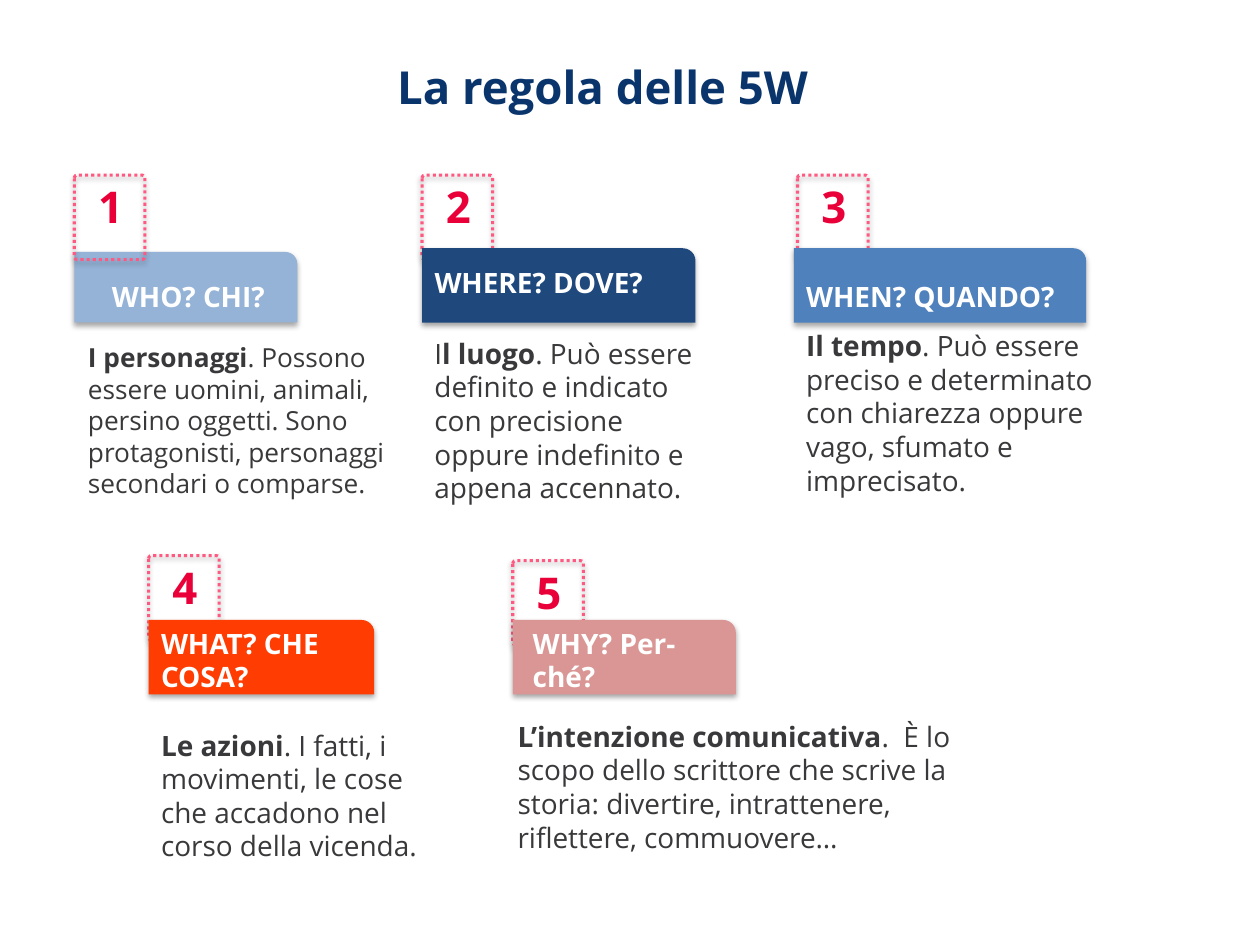
from dataclasses import dataclass
from typing import Any

from lxml.etree import SubElement
from pptx import Presentation
from pptx.dml.color import RGBColor
from pptx.enum.dml import MSO_LINE
from pptx.enum.shapes import MSO_SHAPE as Shape
from pptx.enum.text import MSO_AUTO_SIZE as AutoSize, PP_ALIGN as Align
from pptx.oxml.ns import qn
from pptx.util import Inches, Pt

NAVY = RGBColor(0x0A, 0x35, 0x6C)
PINK = RGBColor(0xFF, 0x59, 0x81)
CRIMSON = RGBColor(0xEA, 0x00, 0x38)
GRAPHITE = RGBColor(0x39, 0x39, 0x3B)
WHITE = RGBColor(0xFF, 0xFF, 0xFF)
LIGHT_BLUE = RGBColor(0x95, 0xB3, 0xD7)
DARK_BLUE = RGBColor(0x1F, 0x49, 0x7D)
BLUE = RGBColor(0x4F, 0x81, 0xBD)
ORANGE = RGBColor(0xFF, 0x3C, 0x01)
ROSE = RGBColor(0xD9, 0x96, 0x94)


@dataclass
class Board:
    slide: Any
    font: str = "Open Sans"

    def text(self, box, parts, size, color, wrap=True, align=Align.LEFT, shapes=None):
        area = (shapes or self.slide.shapes).add_textbox(*map(Inches, box))
        frame = area.text_frame
        frame.word_wrap = wrap
        frame.auto_size = AutoSize.SHAPE_TO_FIT_TEXT
        paragraph = frame.paragraphs[0]
        paragraph.alignment = align
        for words, bold in parts:
            run = paragraph.add_run()
            run.text = words
            run.font.bold = bold
        font = paragraph.font
        font.name, font.size, font.color.rgb = self.font, Pt(size), color

    def shadow(self, shape):
        shape.shadow.inherit = False
        effects = shape._element.spPr.find(qn("a:effectLst"))
        outer = SubElement(effects, qn("a:outerShdw"), blurRad="40000",
                           dist="23000", dir="5400000", rotWithShape="0")
        black = SubElement(outer, qn("a:srgbClr"), val="000000")
        SubElement(black, qn("a:alpha"), val="35000")

    def bar(self, box, color):
        bar = self.slide.shapes.add_shape(Shape.ROUND_1_RECTANGLE, *map(Inches, box))
        bar.adjustments[0] = 0.17
        bar.fill.solid()
        bar.fill.fore_color.rgb = color
        bar.line.fill.background()
        self.shadow(bar)

    def badge(self, left, top, number):
        shapes = self.slide.shapes.add_group_shape().shapes
        frame = shapes.add_shape(Shape.ROUNDED_RECTANGLE, Inches(left), Inches(top),
                                 Inches(0.56), Inches(0.67))
        frame.adjustments[0] = 0.04
        frame.fill.background()
        frame.line.color.rgb = PINK
        frame.line.width = Pt(1.75)
        frame.line.dash_style = MSO_LINE.ROUND_DOT
        self.shadow(frame)
        self.text((left + 0.09, top - 0.01, 0.24, 0.51), [(str(number), True)],
                  25, CRIMSON, shapes=shapes)

    def heading(self, box, words, wrap):
        self.text(box, [(words, True)], 16, WHITE, wrap)


def main():
    deck = Presentation()
    deck.slide_width, deck.slide_height = Inches(10), Inches(7.5)
    board = Board(deck.slides.add_slide(deck.slide_layouts[6]))
    board.text((2.85, 0.42, 3.87, 0.53), [("La regola delle 5W", True)],
               26, NAVY, wrap=False, align=Align.CENTER)

    questions = [
        ((0.59, 1.39), (0.59, 2, 1.77, 0.56), LIGHT_BLUE,
         (0.79, 2.17, 1.57, 0.36), "WHO? CHI?", False, (0.6, 2.66, 2.57, 1.35), 15,
         [("I personaggi", True),
          (". Possono essere uomini, animali, persino oggetti. Sono protagonisti, "
           "personaggi secondari o comparse.", False)]),
        ((3.35, 1.39), (3.35, 1.97, 2.17, 0.59), DARK_BLUE,
         (3.35, 2.06, 2.12, 0.36), "WHERE? DOVE?", False, (3.35, 2.62, 2.37, 1.43), 16,
         [("I", False), ("l luogo", True),
          (". Può essere definito e indicato con precisione oppure indefinito "
           "e appena accennato.", False)]),
        ((6.33, 1.39), (6.3, 1.97, 2.32, 0.59), BLUE,
         (6.3, 2.17, 2.37, 0.36), "WHEN? QUANDO?", False, (6.3, 2.56, 2.56, 1.43), 16,
         [("Il tempo", True),
          (". Può essere preciso e determinato con chiarezza oppure vago, sfumato "
           "e imprecisato.", False)]),
        ((1.18, 4.41), (1.18, 4.92, 1.79, 0.59), ORANGE,
         (1.18, 4.92, 1.66, 0.63), "WHAT? CHE COSA?", True, (1.18, 5.73, 2.35, 1.16), 16,
         [("Le azioni", True),
          (". I fatti, i movimenti, le cose che accadono nel corso della vicenda.", False)]),
        ((4.07, 4.45), (4.07, 4.92, 1.77, 0.59), ROSE,
         (4.13, 4.92, 1.66, 0.63), "WHY? Per-ché?", True, (4.01, 5.66, 3.87, 1.16), 16,
         [("L’intenzione comunicativa", True),
          (".  È lo scopo dello scrittore che scrive la storia: divertire, "
           "intrattenere, riflettere, commuovere…", False)]),
    ]
    for number, question in enumerate(questions, 1):
        corner, bar, color, title_box, title, wrap, answer_box, size, answer = question
        badge_in_front = number == 1
        if badge_in_front:
            board.bar(bar, color)
        board.badge(*corner, number)
        if not badge_in_front:
            board.bar(bar, color)
        board.heading(title_box, title, wrap)
        board.text(answer_box, answer, size, GRAPHITE)

    deck.save("out.pptx")


if __name__ == "__main__":
    main()
